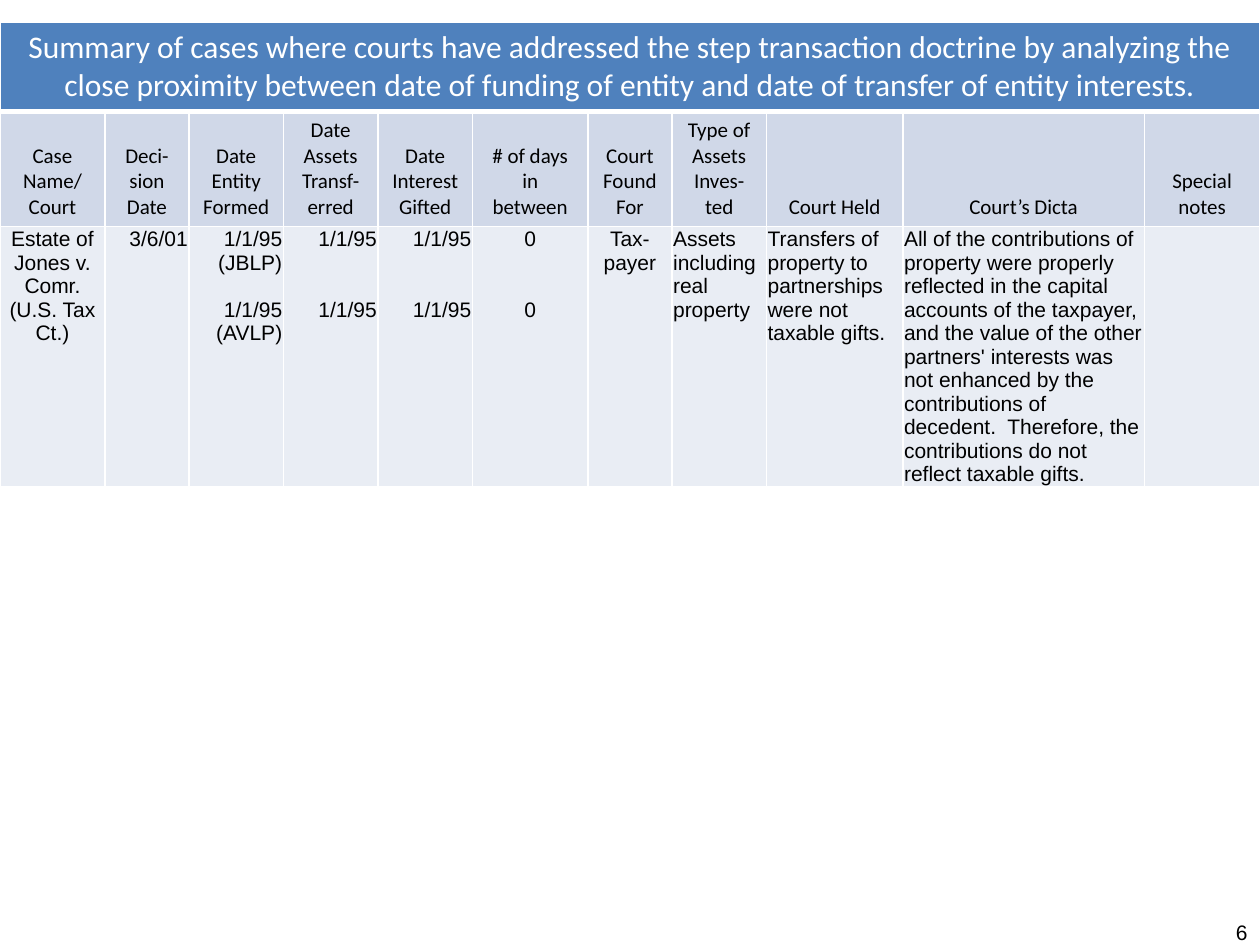
from dataclasses import dataclass

from lxml.etree import SubElement
from pptx import Presentation
from pptx.dml.color import RGBColor
from pptx.enum.text import MSO_ANCHOR, PP_ALIGN
from pptx.oxml.ns import qn
from pptx.util import Pt


@dataclass(frozen=True)
class Theme:
    title_fill: str = "4F81BD"
    header_fill: str = "D0D8E8"
    body_fill: str = "E9EDF4"
    white: str = "FFFFFF"
    black: str = "000000"
    title_size: int = 18
    text_size: int = 12
    heading_font: str = "Calibri"
    body_font: str = "Arial"


TITLE = (
    "Summary of cases where courts have addressed the step transaction doctrine by "
    "analyzing the close proximity between date of funding of entity and date of "
    "transfer of entity interests."
)
DICTA = (
    "All of the contributions of property were properly reflected in the capital "
    "accounts of the taxpayer, and the value of the other partners' interests was not "
    "enhanced by the contributions of decedent.  Therefore, the contributions do not "
    "reflect taxable gifts."
)
LEFT, CENTER, RIGHT = PP_ALIGN.LEFT, PP_ALIGN.CENTER, PP_ALIGN.RIGHT
LINE = 13.5
COLUMNS = [
    (60, "Case Name/\nCourt", "Estate of Jones v. Comr. (U.S. Tax Ct.)", CENTER, 0),
    (48, "Deci-sion Date", "3/6/01", RIGHT, 0),
    (54, "Date Entity Formed", "1/1/95 (JBLP)\n1/1/95\n(AVLP)", RIGHT, LINE),
    (54, "Date Assets Transf-erred", "1/1/95\n1/1/95", RIGHT, 2 * LINE),
    (54, "Date Interest Gifted", "1/1/95\n1/1/95", RIGHT, 2 * LINE),
    (66, "# of days in between", "0\n0", CENTER, 2 * LINE),
    (48, "Court Found For", "Tax-payer", CENTER, 0),
    (54, "Type of Assets Inves-ted", "Assets including real property", LEFT, 0),
    (78, "Court Held", "Transfers of property to partnerships were not taxable gifts.", LEFT, 0),
    (138, "Court’s Dicta", DICTA, LEFT, 0),
    (66, "Special notes", "", LEFT, 0),
]
ROW_HEIGHTS = [50, 65, 148]


def write_text(frame, text, *, size, font, color, align=LEFT, gap=0):
    """Write one paragraph per line, with the gap above the second one."""
    frame.word_wrap = True
    for index, line in enumerate(text.split("\n") if text else []):
        paragraph = frame.add_paragraph() if index else frame.paragraphs[0]
        paragraph.alignment = align
        if index == 1 and gap:
            paragraph.space_before = Pt(gap)
        run = paragraph.add_run()
        run.text = line
        run.font.size = Pt(size)
        run.font.name = font
        run.font.color.rgb = RGBColor.from_string(color)


class SlideBuilder:
    def __init__(self, slide, theme):
        self.slide = slide
        self.theme = theme

    def table(self, left, top, widths, heights):
        shape = self.slide.shapes.add_table(
            len(heights), len(widths), Pt(left), Pt(top), Pt(sum(widths)), Pt(sum(heights))
        )
        table = shape.table
        table.first_row = table.horz_banding = False
        for column, width in zip(table.columns, widths):
            column.width = Pt(width)
        for row, height in zip(table.rows, heights):
            row.height = Pt(height)
        return table

    def cell(self, cell, text, *, fill, bottom=1, anchor=MSO_ANCHOR.TOP, inset=None, **style):
        if inset is not None:
            cell.margin_left = cell.margin_right = cell.margin_top = Pt(inset)
            cell.margin_bottom = Pt(0)
        cell.vertical_anchor = anchor
        self.borders(cell, bottom)
        cell.fill.solid()
        cell.fill.fore_color.rgb = RGBColor.from_string(fill)
        write_text(cell.text_frame, text, **style)

    def borders(self, cell, bottom):
        properties = cell._tc.get_or_add_tcPr()
        for side, width in (("L", 1), ("R", 1), ("T", 1), ("B", bottom)):
            line = SubElement(properties, qn(f"a:ln{side}"), w=str(Pt(width)))
            solid = SubElement(line, qn("a:solidFill"))
            SubElement(solid, qn("a:srgbClr"), val=self.theme.white)

    def text_box(self, text, left, top, width, height, **style):
        shape = self.slide.shapes.add_textbox(Pt(left), Pt(top), Pt(width), Pt(height))
        write_text(shape.text_frame, text, **style)


def main():
    presentation = Presentation()
    presentation.slide_width, presentation.slide_height = Pt(720), Pt(540)
    theme = Theme()
    builder = SlideBuilder(presentation.slides.add_slide(presentation.slide_layouts[6]), theme)
    table = builder.table(0, 12.5, [column[0] for column in COLUMNS], ROW_HEIGHTS)

    table.cell(0, 0).merge(table.cell(0, len(COLUMNS) - 1))
    builder.cell(
        table.cell(0, 0), TITLE, fill=theme.title_fill, bottom=3, size=theme.title_size,
        font=theme.heading_font, color=theme.white, align=CENTER,
    )
    plain = {"size": theme.text_size, "color": theme.black}
    for index, (_, heading, text, align, gap) in enumerate(COLUMNS):
        builder.cell(
            table.cell(1, index), heading, fill=theme.header_fill, anchor=MSO_ANCHOR.BOTTOM,
            font=theme.heading_font, align=CENTER, **plain,
        )
        builder.cell(
            table.cell(2, index), text, fill=theme.body_fill, inset=0.7,
            font=theme.body_font, align=align, gap=gap, **plain,
        )

    builder.text_box("6", 552, 522, 168, 18, font=theme.body_font, align=RIGHT, **plain)
    presentation.save("out.pptx")


if __name__ == "__main__":
    main()
